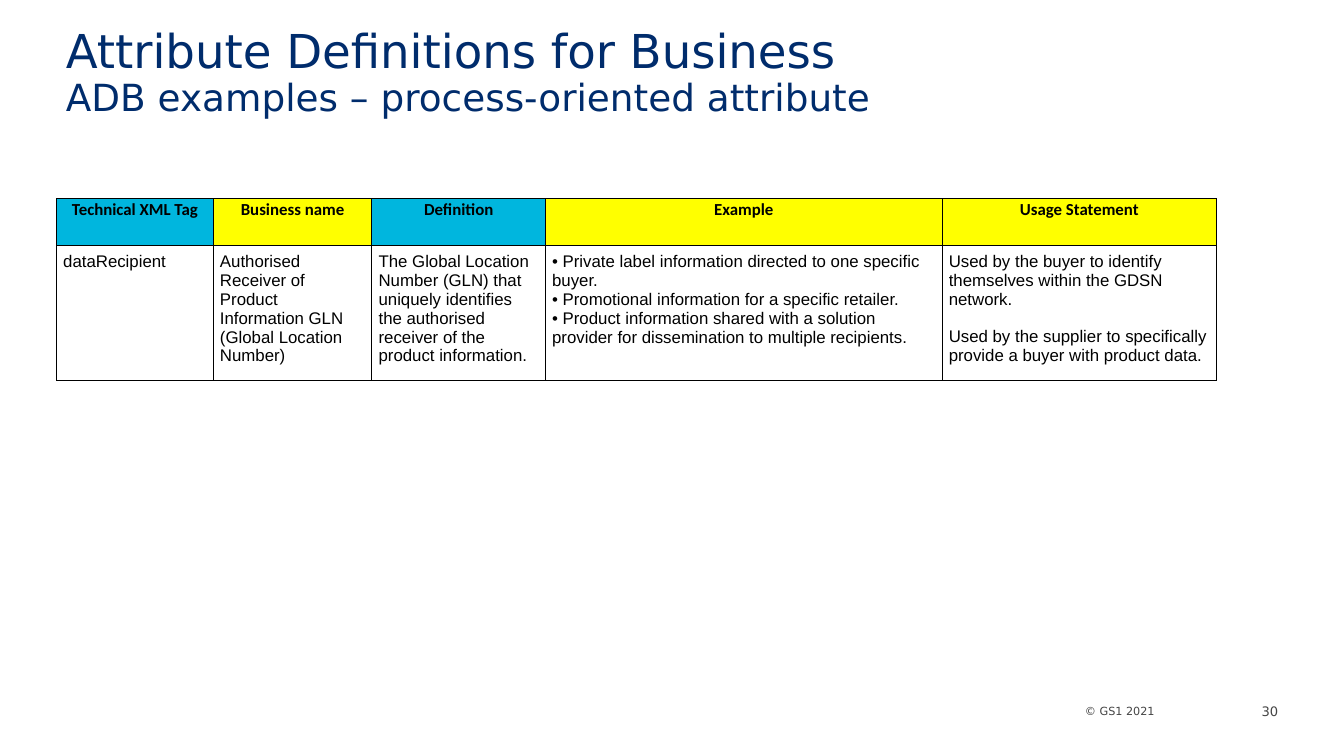
from lxml import etree
from pptx import Presentation
from pptx.dml.color import RGBColor
from pptx.enum.text import MSO_ANCHOR, PP_ALIGN
from pptx.oxml.ns import qn
from pptx.util import Pt

TOP, MIDDLE = MSO_ANCHOR.TOP, MSO_ANCHOR.MIDDLE
LEFT, CENTER, RIGHT = PP_ALIGN.LEFT, PP_ALIGN.CENTER, PP_ALIGN.RIGHT
NAVY = RGBColor(0x00, 0x2C, 0x6C)
GREY = RGBColor(0x45, 0x45, 0x45)
BLACK = RGBColor(0x00, 0x00, 0x00)
CYAN = RGBColor(0x00, 0xB6, 0xDE)
YELLOW = RGBColor(0xFF, 0xFF, 0x00)
SANS = "DejaVu Sans"

COLUMNS = [
    ("Technical XML Tag", CYAN, 84, ["dataRecipient"]),
    ("Business name", YELLOW, 85,
     ["Authorised Receiver of Product Information GLN (Global Location Number)"]),
    ("Definition", CYAN, 93,
     ["The Global Location Number (GLN) that uniquely identifies the "
      "authorised receiver of the product information."]),
    ("Example", YELLOW, 212.5,
     ["• Private label information directed to one specific buyer.\v"
      "• Promotional information for a specific retailer.\v"
      "• Product information shared with a solution provider for "
      "dissemination to multiple recipients."]),
    ("Usage Statement", YELLOW, 147,
     ["Used by the buyer to identify themselves within the GDSN network.",
      "Used by the supplier to specifically provide a buyer with product data."]),
]


def set_font(font, name, size, color, bold=False):
    """Set the face, size, colour and weight of a font."""
    font.name, font.size, font.bold = name, Pt(size), bold
    font.color.rgb = color


def add_text(slide, box, anchor, pads=(0, 0, 0, 0)):
    """Add a wrapping text box and return its frame."""
    frame = slide.shapes.add_textbox(*map(Pt, box)).text_frame
    frame.word_wrap = True
    frame.vertical_anchor = anchor
    (frame.margin_left, frame.margin_top,
     frame.margin_right, frame.margin_bottom) = map(Pt, pads)
    return frame


def add_title(slide, box):
    """Place the title and its smaller second line."""
    par = add_text(slide, box, MIDDLE, (0, 3.6, 7.2, 3.6)).paragraphs[0]
    par.line_spacing = 0.9
    set_font(par.font, SANS, 25, NAVY)
    par.add_run().text = "Attribute Definitions for Business"
    par.add_line_break()
    sub = par.add_run()
    sub.text = "ADB examples – process-oriented attribute"
    sub.font.size = Pt(20)


def add_note(slide, box, text, size, anchor):
    """Place a small right-aligned footer text."""
    par = add_text(slide, box, anchor).paragraphs[0]
    par.text = text
    par.alignment = RIGHT
    set_font(par.font, SANS, size, GREY)


def add_edges(cell):
    """Draw thin black lines on all four sides of a cell."""
    props = cell._tc.get_or_add_tcPr()
    for spot, side in enumerate(("lnL", "lnR", "lnT", "lnB")):
        line = etree.Element(qn(f"a:{side}"), w=str(Pt(0.5)))
        fill = etree.SubElement(line, qn("a:solidFill"))
        etree.SubElement(fill, qn("a:srgbClr"), val=str(BLACK))
        props.insert(spot, line)


def fill_cell(cell, texts, face, align, pads, color=None):
    """Write a cell's paragraphs and set its fill and edges."""
    (cell.margin_left, cell.margin_top,
     cell.margin_right, cell.margin_bottom) = map(Pt, pads)
    if color is None:
        cell.fill.background()
    else:
        cell.fill.solid()
        cell.fill.fore_color.rgb = color
    add_edges(cell)
    frame = cell.text_frame
    for spot, text in enumerate(texts):
        par = frame.add_paragraph() if spot else frame.paragraphs[0]
        par.text = text
        par.alignment = align
        if spot:
            par.space_before = Pt(10)
        set_font(par.font, face, 9, BLACK, bold=color is not None)


def add_grid(slide, box, head):
    """Place the attribute table with a header row of the given height."""
    table = slide.shapes.add_table(2, len(COLUMNS), *map(Pt, box)).table
    table.rows[0].height = Pt(head)
    table.rows[1].height = Pt(box[3] - head)
    for col, (name, color, width, texts) in enumerate(COLUMNS):
        table.columns[col].width = Pt(width)
        fill_cell(table.cell(0, col), [name], "Calibri", CENTER,
                  (0.7, 0.7, 0.7, 0), color)
        fill_cell(table.cell(1, col), texts, "Arial", LEFT, (3.6,) * 4)


def main():
    """Build the slide and save it."""
    deck = Presentation()
    deck.slide_width, deck.slide_height = Pt(720), Pt(405)
    slide = deck.slides.add_slide(deck.slide_layouts[6])
    add_note(slide, (400.3, 377.3, 218.2, 8), "© GS1 2021", 6, TOP)
    add_note(slide, (665.3, 375.1, 19.4, 11.5), "30", 7, MIDDLE)
    add_title(slide, (35.3, 13, 649.4, 53.3))
    width = sum(column[2] for column in COLUMNS)
    add_grid(slide, (30.25, 106.5, width, 92.5), 25.2)
    deck.save("out.pptx")


if __name__ == "__main__":
    main()
